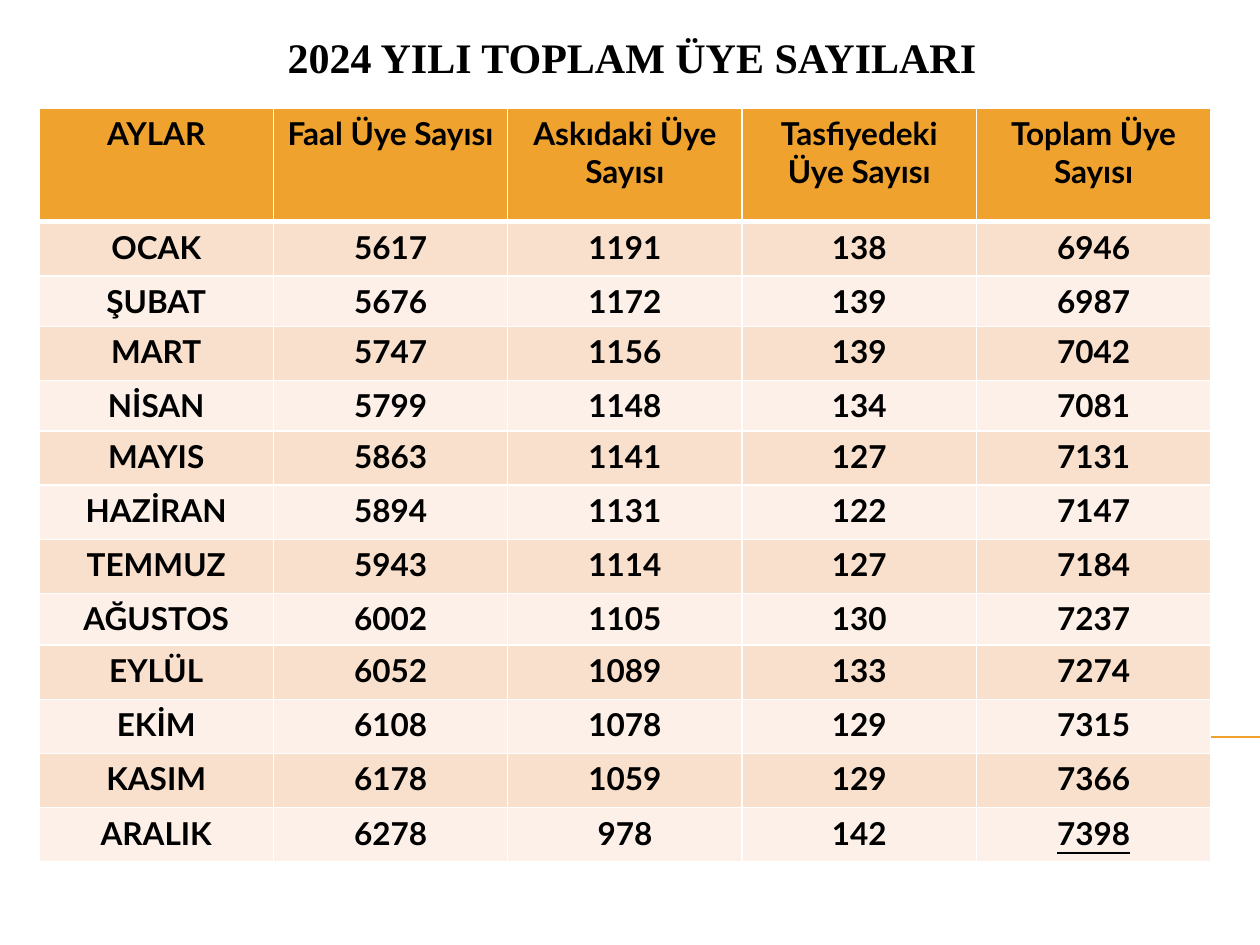
from lxml import etree
from pptx import Presentation
from pptx.dml.color import RGBColor
from pptx.enum.shapes import MSO_CONNECTOR
from pptx.enum.text import MSO_ANCHOR, PP_ALIGN
from pptx.oxml.ns import qn
from pptx.util import Inches, Pt

STRAIGHT = MSO_CONNECTOR.STRAIGHT
BOTTOM = MSO_ANCHOR.BOTTOM
CENTER = PP_ALIGN.CENTER

BLACK = "000000"
WHITE = "FFFFFF"
ORANGE = "F0A22E"
BANDS = ("F9E0CD", "FCF0E8")

HEADERS = ("AYLAR", "Faal Üye Sayısı", "Askıdaki Üye Sayısı",
           "Tasfiyedeki Üye Sayısı", "Toplam Üye Sayısı")
MONTHS = (
    ("OCAK", 5617, 1191, 138, 6946),
    ("ŞUBAT", 5676, 1172, 139, 6987),
    ("MART", 5747, 1156, 139, 7042),
    ("NİSAN", 5799, 1148, 134, 7081),
    ("MAYIS", 5863, 1141, 127, 7131),
    ("HAZİRAN", 5894, 1131, 122, 7147),
    ("TEMMUZ", 5943, 1114, 127, 7184),
    ("AĞUSTOS", 6002, 1105, 130, 7237),
    ("EYLÜL", 6052, 1089, 133, 7274),
    ("EKİM", 6108, 1078, 129, 7315),
    ("KASIM", 6178, 1059, 129, 7366),
    ("ARALIK", 6278, 978, 142, 7398),
)
HEADER_HEIGHT = 0.9
MONTH_HEIGHT = 0.43
SHORT_HEIGHTS = {"ŞUBAT": 0.39, "NİSAN": 0.35, "AĞUSTOS": 0.41}


def color(hex_value):
    return RGBColor.from_string(hex_value)


def add_run(paragraph, text, size, font_name, underline=None):
    paragraph.alignment = CENTER
    run = paragraph.add_run()
    run.text = text
    run.font.size = Pt(size)
    run.font.name = font_name
    run.font.bold = True
    run.font.underline = underline
    run.font.color.rgb = color(BLACK)


def add_accent_line(slide, left, top, width):
    line = slide.shapes.add_connector(
        STRAIGHT, Inches(left), Inches(top), Inches(left + width), Inches(top))
    line.line.color.rgb = color(ORANGE)
    line.line.width = Pt(0.75)
    etree.SubElement(line._element.spPr, qn("a:effectLst"))


def add_title(slide, left, top, width, height):
    box = slide.shapes.add_textbox(
        Inches(left), Inches(top), Inches(width), Inches(height))
    frame = box.text_frame
    frame.word_wrap = True
    frame.vertical_anchor = BOTTOM
    add_run(frame.paragraphs[0], "2024 YILI TOPLAM ÜYE SAYILARI", 24, "Times New Roman")


def set_borders(cell, bottom_width):
    properties = cell._tc.get_or_add_tcPr()
    widths = {"a:lnL": 1, "a:lnR": 1, "a:lnT": 1, "a:lnB": bottom_width}
    for index, (tag, width) in enumerate(widths.items()):
        border = etree.Element(qn(tag), w=str(Pt(width)))
        fill = etree.SubElement(border, qn("a:solidFill"))
        etree.SubElement(fill, qn("a:srgbClr"), val=WHITE)
        properties.insert(index, border)


def add_member_table(slide, left, top, width):
    heights = [HEADER_HEIGHT] + [SHORT_HEIGHTS.get(month[0], MONTH_HEIGHT) for month in MONTHS]
    rows = (HEADERS,) + MONTHS
    table = slide.shapes.add_table(
        len(rows), len(HEADERS), Inches(left), Inches(top),
        Inches(width), Inches(sum(heights))).table
    for column in table.columns:
        column.width = Inches(width / len(HEADERS))
    for row_index, values in enumerate(rows):
        table.rows[row_index].height = Inches(heights[row_index])
        is_header = row_index == 0
        fill = ORANGE if is_header else BANDS[(row_index - 1) % 2]
        for column_index, value in enumerate(values):
            cell = table.cell(row_index, column_index)
            cell.fill.solid()
            cell.fill.fore_color.rgb = color(fill)
            set_borders(cell, 3 if is_header else 1)
            is_grand_total = values is MONTHS[-1] and column_index == len(HEADERS) - 1
            add_run(cell.text_frame.paragraphs[0], str(value), 18, "Lato",
                    True if is_grand_total else None)
    for column_index in range(len(HEADERS)):
        top_border = table.cell(1, column_index)._tc.tcPr.find(qn("a:lnT"))
        top_border.set("w", str(Pt(3)))


def main():
    presentation = Presentation()
    presentation.slide_width = Inches(10)
    presentation.slide_height = Inches(7.5)
    slide = presentation.slides.add_slide(presentation.slide_layouts[6])
    add_accent_line(slide, 0.56, 5.85, 9.44)
    add_title(slide, 0.39, 0.23, 9.25, 0.47)
    add_member_table(slide, 0.31, 0.86, 9.3)
    presentation.save("out.pptx")


if __name__ == "__main__":
    main()
